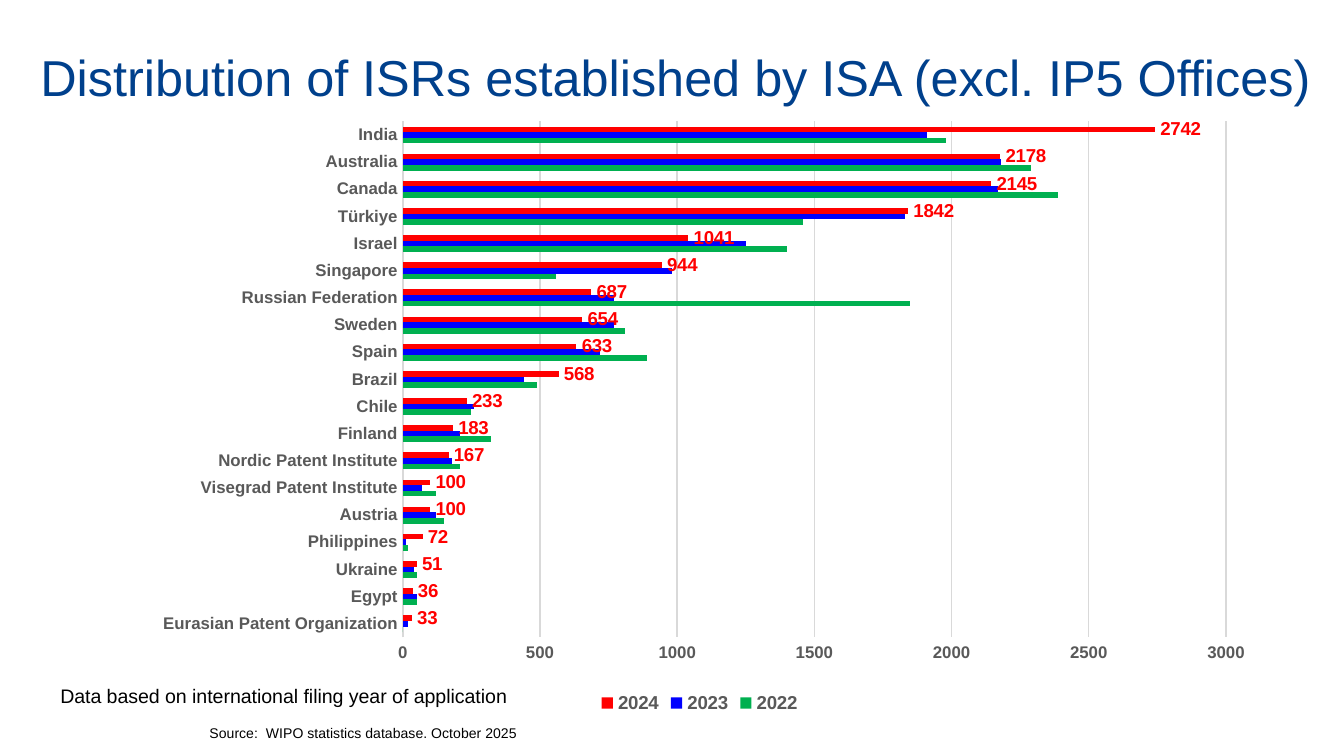
from lxml.etree import SubElement
from pptx import Presentation
from pptx.chart.data import CategoryChartData
from pptx.dml.color import RGBColor
from pptx.enum.chart import XL_CHART_TYPE, XL_LABEL_POSITION, XL_LEGEND_POSITION, XL_TICK_MARK
from pptx.enum.text import MSO_ANCHOR, MSO_AUTO_SIZE, PP_ALIGN
from pptx.oxml.ns import qn
from pptx.util import Inches, Pt

WIDTH = Inches(10)
HEIGHT = WIDTH * 9 // 16
FONT = "Arial"
NAVY = RGBColor(0x00, 0x40, 0x8C)
BLACK = RGBColor(0x00, 0x00, 0x00)
GRAY = RGBColor(0x59, 0x59, 0x59)
LIGHT_GRAY = RGBColor(0xD9, 0xD9, 0xD9)
RED = RGBColor(0xFF, 0x00, 0x00)
BLUE = RGBColor(0x00, 0x00, 0xFF)
GREEN = RGBColor(0x00, 0xB0, 0x50)

# Percent of the slide's size: left, top, width, height
TITLE_AREA = (2, 1.78, 96.9, 16.71)
SOURCE_AREA = (14.6, 94.93, 37.5, 4.09)
NOTE_AREA = (3.5, 89.6, 35.9, 4.98)
CHART_AREA = (9.1, 14.04, 85.9, 81.07)
# Percent of the chart's size
PLOT_AREA = {"x": 24.3, "y": 2.5, "w": 71.3, "h": 84.2}

YEARS = {"2022": GREEN, "2023": BLUE, "2024": RED}
FILINGS = [
    ("Eurasian Patent Organization", 0, 20, 33),
    ("Egypt", 50, 50, 36),
    ("Ukraine", 50, 40, 51),
    ("Philippines", 20, 10, 72),
    ("Austria", 150, 120, 100),
    ("Visegrad Patent Institute", 120, 70, 100),
    ("Nordic Patent Institute", 210, 180, 167),
    ("Finland", 320, 210, 183),
    ("Chile", 250, 260, 233),
    ("Brazil", 490, 440, 568),
    ("Spain", 890, 720, 633),
    ("Sweden", 810, 770, 654),
    ("Russian Federation", 1850, 770, 687),
    ("Singapore", 560, 980, 944),
    ("Israel", 1400, 1250, 1041),
    ("Türkiye", 1460, 1830, 1842),
    ("Canada", 2390, 2170, 2145),
    ("Australia", 2290, 2180, 2178),
    ("India", 1980, 1910, 2742),
]


def to_lengths(area):
    sizes = (WIDTH, HEIGHT, WIDTH, HEIGHT)
    return [round(size * percent / 100) for size, percent in zip(sizes, area)]


def style_font(font, size, color, bold=False):
    font.name = FONT
    font.size = Pt(size)
    font.bold = bold
    font.color.rgb = color


def write_text(shape, text, size, color):
    text_frame = shape.text_frame
    text_frame.text = text
    text_frame.word_wrap = True
    text_frame.auto_size = MSO_AUTO_SIZE.NONE
    paragraph = text_frame.paragraphs[0]
    paragraph.alignment = PP_ALIGN.LEFT
    style_font(paragraph.runs[0].font, size, color)


def add_title(slide, text):
    title = slide.shapes.title
    title.left, title.top, title.width, title.height = to_lengths(TITLE_AREA)
    write_text(title, text, 27, NAVY)
    title.text_frame.vertical_anchor = MSO_ANCHOR.MIDDLE


def add_note(slide, area, text, size):
    write_text(slide.shapes.add_textbox(*to_lengths(area)), text, size, BLACK)


def style_axis(axis):
    axis.major_tick_mark = XL_TICK_MARK.NONE
    axis.minor_tick_mark = XL_TICK_MARK.NONE
    style_font(axis.tick_labels.font, 9, GRAY, bold=True)


def style_line(line):
    line.color.rgb = LIGHT_GRAY
    line.width = Pt(0.75)


def fix_plot_area(chart):
    """Pin the inner plot area to PLOT_AREA."""
    plot_area = chart.plots[0]._element.getparent()
    layout = plot_area.find(qn("c:layout"))
    if layout is None:
        layout = SubElement(plot_area, qn("c:layout"))
        plot_area.insert(0, layout)
    manual = SubElement(layout, qn("c:manualLayout"))
    settings = {"layoutTarget": "inner", "xMode": "edge", "yMode": "edge"}
    settings.update({name: percent / 100 for name, percent in PLOT_AREA.items()})
    for name, value in settings.items():
        SubElement(manual, qn(f"c:{name}")).set("val", str(value))


def add_labels(series):
    labels = series.data_labels
    labels.show_value = True
    labels.position = XL_LABEL_POSITION.OUTSIDE_END
    style_font(labels.font, 10, RED, bold=True)


def add_filings_chart(slide):
    offices, *columns = zip(*FILINGS)
    chart_data = CategoryChartData()
    chart_data.categories = offices
    for year, values in zip(YEARS, columns):
        chart_data.add_series(year, values)
    chart = slide.shapes.add_chart(
        XL_CHART_TYPE.BAR_CLUSTERED, *to_lengths(CHART_AREA), chart_data
    ).chart
    chart.has_title = False
    style_font(chart.font, 10, BLACK)
    fix_plot_area(chart)

    plot = chart.plots[0]
    plot.gap_width = 182
    plot.vary_by_categories = False
    for series, color in zip(plot.series, YEARS.values()):
        series.format.fill.solid()
        series.format.fill.fore_color.rgb = color
    add_labels(plot.series[-1])

    style_axis(chart.category_axis)
    style_line(chart.category_axis.format.line)
    value_axis = chart.value_axis
    style_axis(value_axis)
    value_axis.format.line.fill.background()
    value_axis.minimum_scale, value_axis.maximum_scale = 0, 3000
    value_axis.major_unit = 500
    style_line(value_axis.major_gridlines.format.line)

    chart.has_legend = True
    chart.legend.position = XL_LEGEND_POSITION.BOTTOM
    chart.legend.include_in_layout = False
    style_font(chart.legend.font, 10, GRAY, bold=True)


def main():
    presentation = Presentation()
    presentation.slide_width, presentation.slide_height = WIDTH, HEIGHT
    slide = presentation.slides.add_slide(presentation.slide_layouts.get_by_name("Title Only"))
    add_title(slide, "Distribution of ISRs established by ISA (excl. IP5 Offices)")
    add_note(slide, SOURCE_AREA, "Source:  WIPO statistics database. October 2025", 7.5)
    add_note(slide, NOTE_AREA, "Data based on international filing year of application", 10.5)
    add_filings_chart(slide)
    presentation.save("out.pptx")


if __name__ == "__main__":
    main()
